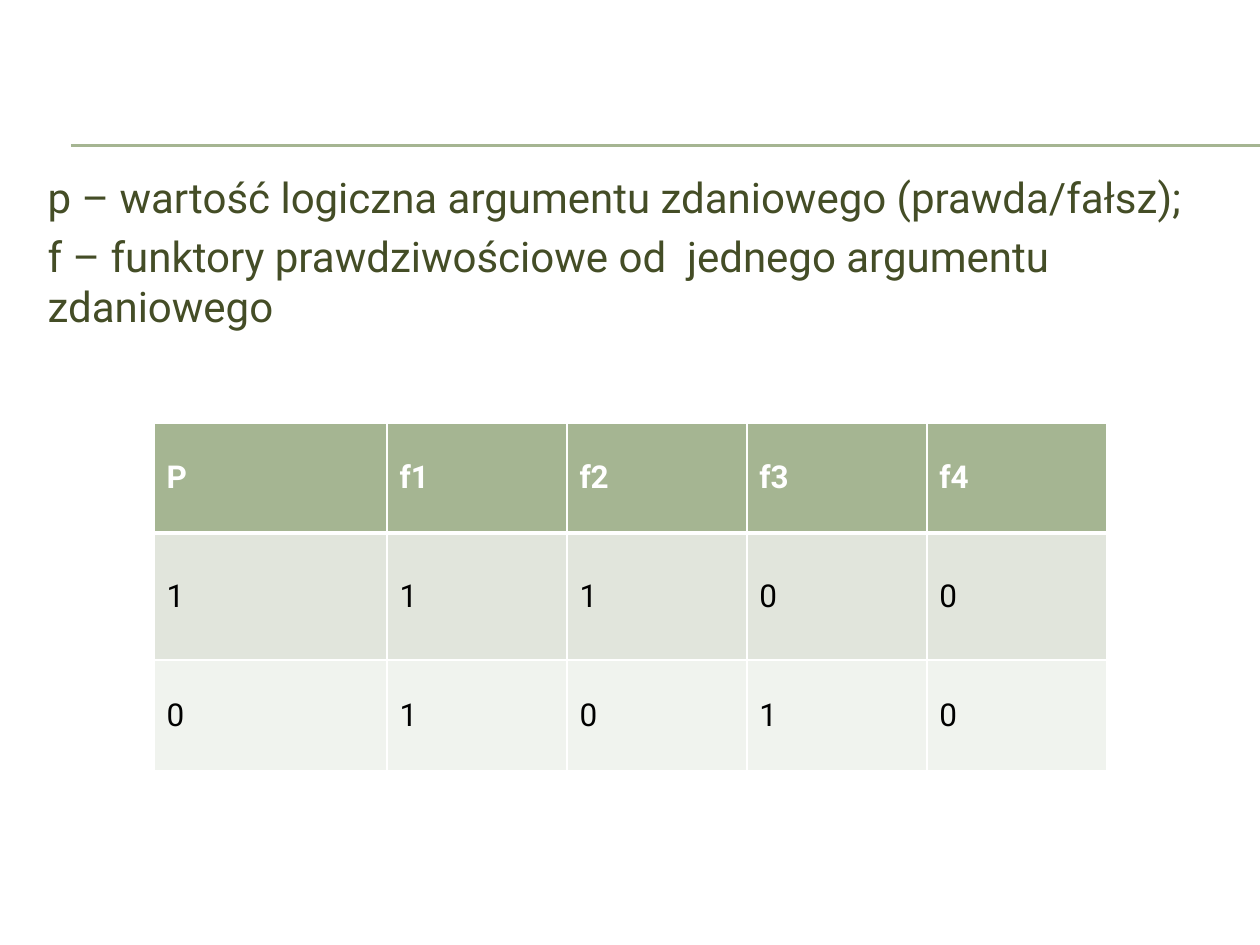
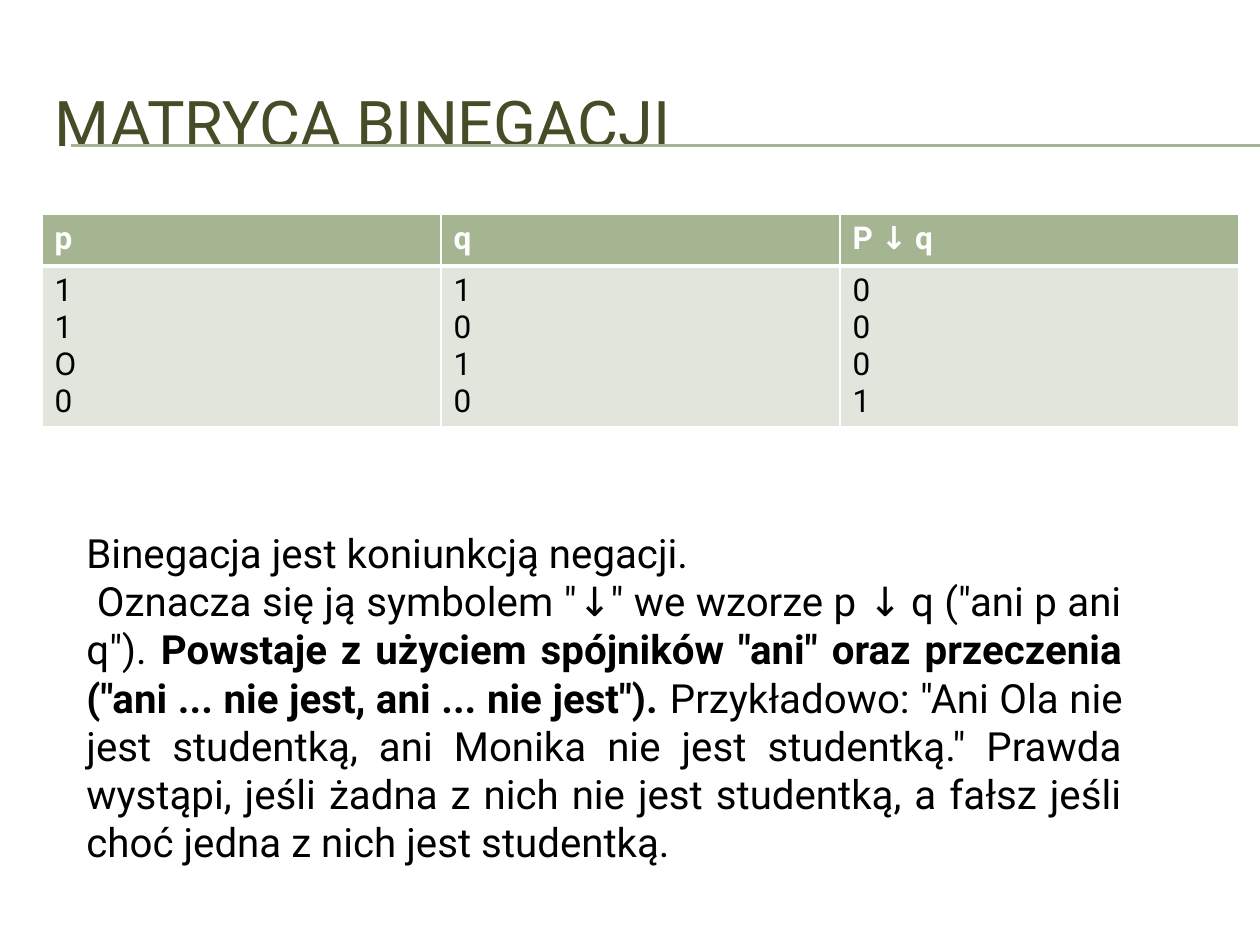
from typing import NamedTuple

import lxml.etree
import pptx
import pptx.dml.color
import pptx.enum.shapes
import pptx.enum.text
import pptx.oxml.ns
import pptx.util

FONT = "Roboto"
HUES = {
    "olive": "444D26",
    "sage": "A5B592",
    "mist": "E1E5DC",
    "pale": "F0F3EE",
    "white": "FFFFFF",
    "black": "000000",
}
FILLS = ["sage", "mist", "pale"]
SCALE = 914400 / 126
ALIGN = pptx.enum.text.PP_ALIGN
ANCHOR = pptx.enum.text.MSO_ANCHOR


class Box(NamedTuple):
    x: int
    y: int
    w: int
    h: int


class Ink(NamedTuple):
    size: int
    hue: str
    bold: bool = False


class Run(NamedTuple):
    text: str
    ink: Ink


class Grid(NamedTuple):
    """A table; line breaks in a cell's text part its paragraphs."""
    x: int
    y: int
    cols: list[int]
    rows: list[int]
    cells: list[list[str]]
    anchor: ANCHOR


TITLE = Ink(36, "olive")
LIST = Ink(24, "olive")
HEAD = Ink(18, "white", True)
CELL = Ink(18, "black")
PROSE = Ink(23, "black")
STRONG = Ink(23, "black", True)

RULES = [145, 146]

FUNCTORS = Grid(
    154, 423, [233] + [180] * 4, [110, 127, 111],
    [["P", "f1", "f2", "f3", "f4"], list("11100"), list("01010")],
    ANCHOR.MIDDLE,
)
MATRIX = Grid(
    42, 214, [399] * 3, [52, 159],
    [["p", "q", "P ↓ q"], ["1\n1\nO\n0", "1\n0\n1\n0", "0\n0\n0\n1"]],
    ANCHOR.TOP,
)
TERMS = [
    [Run("p – wartość logiczna argumentu zdaniowego (prawda/fałsz);", LIST)],
    [Run("f – funktory prawdziwościowe od  jednego argumentu zdaniowego", LIST)],
]
NOTES = [
    [Run("Binegacja jest koniunkcją negacji.", PROSE)],
    [
        Run(' Oznacza się ją symbolem "↓" we wzorze p ↓ q ("ani p ani q"). ', PROSE),
        Run('Powstaje z użyciem spójników "ani" oraz przeczenia '
            '("ani ... nie jest, ani ... nie jest"). ', STRONG),
        Run('Przykładowo: "Ani Ola nie jest studentką, ani Monika nie jest '
            'studentką." Prawda wystąpi, jeśli żadna z nich nie jest studentką, '
            'a fałsz jeśli choć jedna z nich jest studentką.', PROSE),
    ],
]


def px(n: int) -> pptx.util.Emu:
    return pptx.util.Emu(round(n * SCALE))


def rgb(hue: str) -> pptx.dml.color.RGBColor:
    return pptx.dml.color.RGBColor.from_string(HUES[hue])


def place(shape, box: Box) -> None:
    shape.left, shape.top, shape.width, shape.height = map(px, box)


def node(parent, tag: str, **attrs: str):
    name = pptx.oxml.ns.qn(tag)
    return lxml.etree.SubElement(parent, name, attrs)


def write(frame, paras: list[list[Run]], align=ALIGN.LEFT,
          anchor=ANCHOR.TOP, gap: int = 0) -> None:
    """Fill a frame with unbulleted paragraphs, gap points apart."""
    frame.word_wrap = True
    frame.auto_size = pptx.enum.text.MSO_AUTO_SIZE.NONE
    frame.vertical_anchor = anchor
    for i, runs in enumerate(paras):
        para = frame.add_paragraph() if i else frame.paragraphs[0]
        props = para._p.get_or_add_pPr()
        props.set("marL", "0")
        props.set("indent", "0")
        node(props, "a:buNone")
        para.alignment = align
        para.space_before = pptx.util.Pt(gap if i else 0)
        for text, ink in runs:
            run = para.add_run()
            run.text = text
            font = run.font
            font.name, font.bold = FONT, ink.bold
            font.size = pptx.util.Pt(ink.size)
            font.color.rgb = rgb(ink.hue)


def edge(cell, head: bool) -> None:
    """Give a cell white borders, with a thick one below the head row."""
    props = cell._tc.get_or_add_tcPr()
    for side in "LRTB":
        width = 3 if head and side == "B" else 1
        line = node(props, f"a:ln{side}", w=str(pptx.util.Pt(width)))
        node(node(line, "a:solidFill"), "a:srgbClr", val=HUES["white"])


def table(slide, grid: Grid) -> None:
    box = Box(grid.x, grid.y, sum(grid.cols), sum(grid.rows))
    frame = slide.shapes.add_table(len(grid.rows), len(grid.cols), *map(px, box))
    tab = frame.table
    tab.horz_banding = False
    for col, width in zip(tab.columns, grid.cols):
        col.width = px(width)
    for r, (row, height) in enumerate(zip(tab.rows, grid.rows)):
        row.height = px(height)
        ink = CELL if r else HEAD
        for cell, text in zip(row.cells, grid.cells[r]):
            edge(cell, r == 0)
            cell.fill.solid()
            cell.fill.fore_color.rgb = rgb(FILLS[r])
            cell.vertical_anchor = grid.anchor
            frame = cell.text_frame
            for i, part in enumerate(text.split("\n")):
                para = frame.add_paragraph() if i else frame.paragraphs[0]
                run = para.add_run()
                run.text = part
                run.font.name, run.font.bold = FONT, ink.bold
                run.font.size = pptx.util.Pt(ink.size)
                run.font.color.rgb = rgb(ink.hue)


def start(deck, layout: int):
    """Add a slide with the rule lines that all slides share."""
    slide = deck.slides.add_slide(deck.slide_layouts[layout])
    kind = pptx.enum.shapes.MSO_CONNECTOR.STRAIGHT
    for y in RULES:
        line = slide.shapes.add_connector(kind, px(71), px(y), px(1260), px(y))
        line.line.color.rgb = rgb("sage")
        line.line.width = pptx.util.Pt(0.75)
        node(line._element.spPr, "a:effectLst")
    return slide


def functors(deck) -> None:
    slide = start(deck, 1)
    title = slide.shapes.title._element
    title.getparent().remove(title)
    body = slide.placeholders[1]
    place(body, Box(35, 165, 1205, 673))
    write(body.text_frame, TERMS, gap=5)
    table(slide, FUNCTORS)


def matrix(deck) -> None:
    slide = start(deck, 5)
    title = slide.shapes.title
    place(title, Box(42, 63, 1197, 116))
    write(title.text_frame, [[Run("MATRYCA BINEGACJI", TITLE)]],
          anchor=ANCHOR.MIDDLE)
    table(slide, MATRIX)
    text = slide.shapes.add_textbox(*map(px, Box(74, 522, 1062, 354)))
    write(text.text_frame, NOTES, align=ALIGN.JUSTIFY)


def main() -> None:
    deck = pptx.Presentation()
    deck.slide_width, deck.slide_height = px(1260), px(945)
    functors(deck)
    matrix(deck)
    deck.save("out.pptx")


if __name__ == "__main__":
    main()
